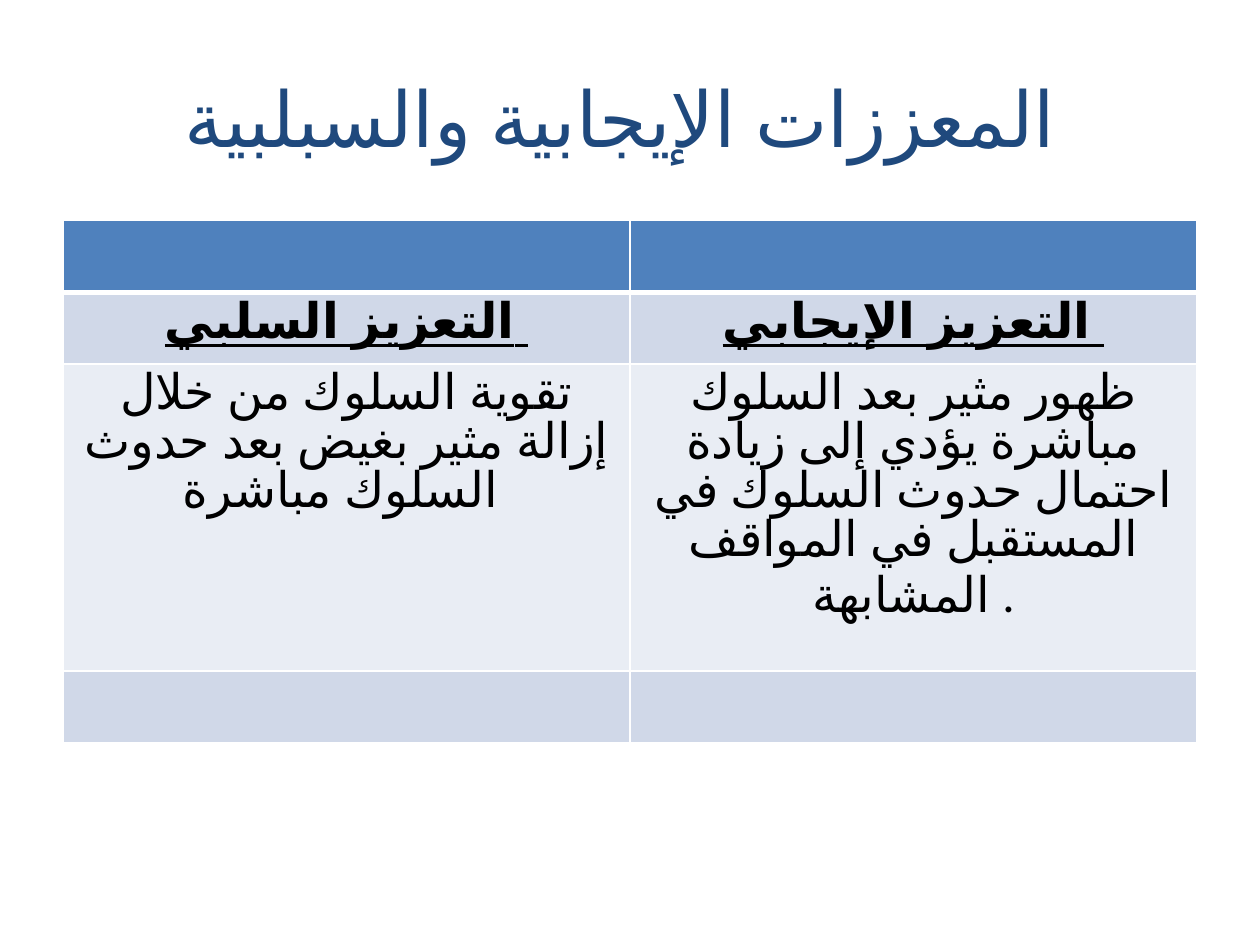
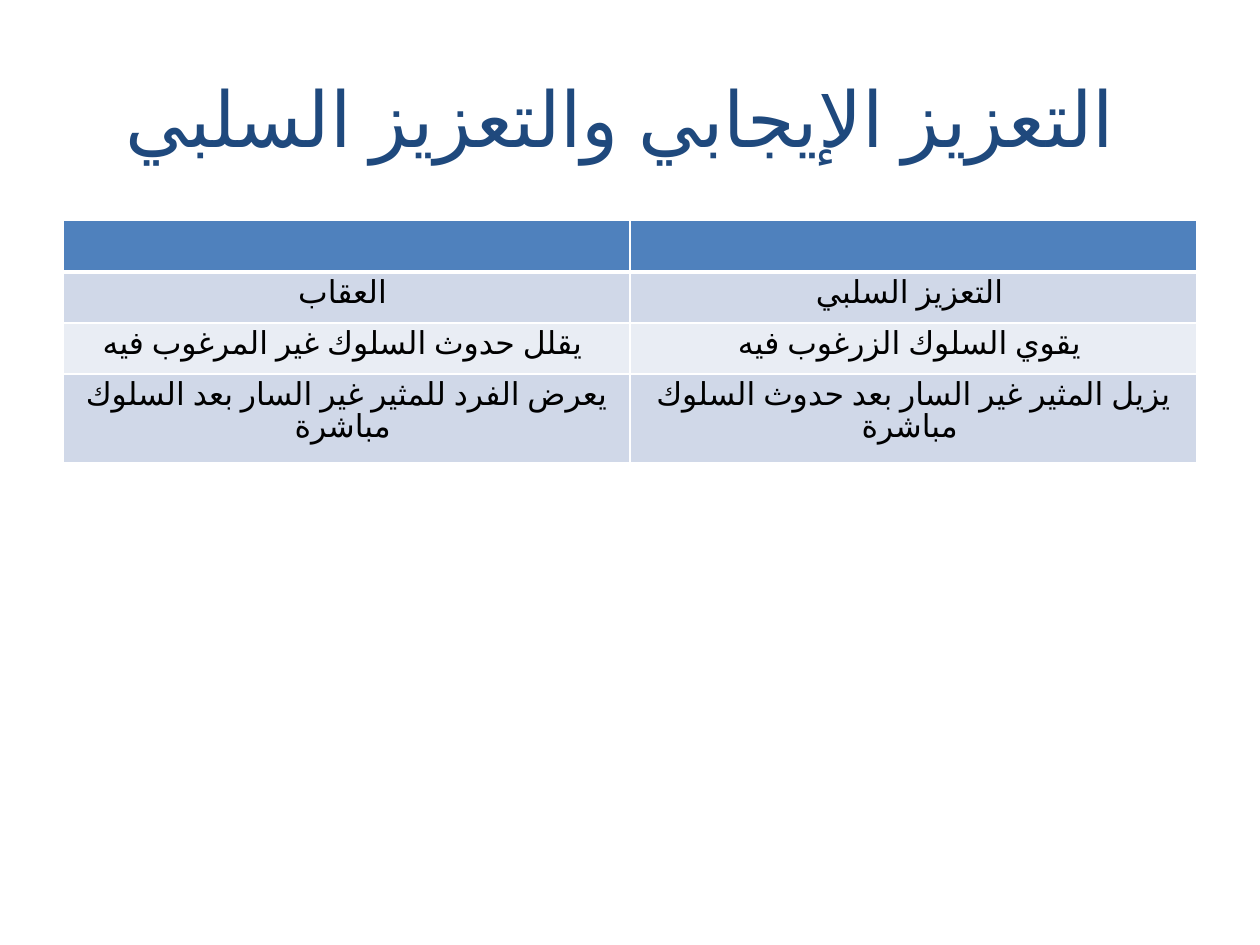
from lxml.etree import SubElement as Sub
from pptx import Presentation
from pptx.dml.color import RGBColor
from pptx.enum.lang import MSO_LANGUAGE_ID as LANG
from pptx.enum.text import MSO_ANCHOR, PP_ALIGN
from pptx.oxml.ns import qn
from pptx.util import Cm, Pt

NAVY, BLUE, BAND, PALE = "1F497D", "4F81BD", "D0D8E8", "E9EDF4"
WHITE, BLACK = "FFFFFF", "000000"
FILLS = [BLUE, BAND, PALE, BAND]
LEFT, WIDTH = Cm(1.27), Cm(22.86)

BASE = {"name": "Calibri", "language_id": LANG.ARABIC, "bold": False}
TITLE = {**BASE, "size": Pt(44)}
LARGE = {**BASE, "size": Pt(28)}
HEAD = {**LARGE, "bold": True, "underline": True}
SMALL = {**BASE, "size": Pt(18)}


def color(hue):
    return RGBColor.from_string(hue)


def write(frame, text, style, hue):
    para = frame.paragraphs[0]
    para.alignment = PP_ALIGN.CENTER
    run = para.add_run()
    run.text = text
    for name, value in style.items():
        setattr(run.font, name, value)
    run.font.color.rgb = color(hue)


def add_title(slide, text):
    frame = slide.shapes.add_textbox(LEFT, Cm(0.76), WIDTH, Cm(3.18)).text_frame
    frame.word_wrap = True
    frame.vertical_anchor = MSO_ANCHOR.MIDDLE
    write(frame, text, TITLE, NAVY)


def add_edges(cell, widths):
    props = cell._tc.get_or_add_tcPr()
    for side, width in widths.items():
        line = Sub(props, qn(f"a:ln{side}"), w=str(Pt(width)))
        Sub(Sub(line, qn("a:solidFill")), qn("a:srgbClr"), val=WHITE)


def add_grid(slide, rows, heights, styles):
    tall = [Cm(size) for size in heights]
    table = slide.shapes.add_table(
        len(rows), 2, LEFT, Cm(4.45), WIDTH, sum(tall)).table
    table.first_row = table.horz_banding = False
    for row, texts in enumerate(rows):
        table.rows[row].height = tall[row]
        for col, text in enumerate(texts):
            cell = table.cell(row, col)
            add_edges(cell, {"L": 1, "R": 1, "T": 3 if row == 1 else 1,
                             "B": 3 if row == 0 else 1})
            cell.fill.solid()
            cell.fill.fore_color.rgb = color(FILLS[row])
            if text:
                write(cell.text_frame, text, styles[row], BLACK)


def add_page(deck, title, rows, heights, styles):
    slide = deck.slides.add_slide(deck.slide_layouts[6])
    add_title(slide, title)
    add_grid(slide, rows, heights, styles)


def main():
    deck = Presentation()
    deck.slide_width, deck.slide_height = Cm(25.4), Cm(19.05)
    blank = ("", "")
    add_page(deck, "المعززات الإيجابية والسبلبية ", [
        blank,
        ("التعزيز السلبي ", "التعزيز الإيجابي "),
        ("تقوية السلوك من خلال إزالة مثير بغيض بعد حدوث السلوك مباشرة ",
         "ظهور مثير بعد السلوك مباشرة يؤدي إلى زيادة احتمال حدوث السلوك "
         "في المستقبل في المواقف المشابهة ."),
        blank,
    ], [1.45, 1.24, 5.42, 1.45], [LARGE, HEAD, LARGE, LARGE])
    add_page(deck, "التعزيز الإيجابي والتعزيز السلبي ", [
        blank,
        ("العقاب ", "التعزيز السلبي "),
        ("يقلل حدوث السلوك غير المرغوب فيه ", "يقوي السلوك الزرغوب فيه "),
        ("يعرض الفرد للمثير غير السار بعد السلوك مباشرة ",
         "يزيل المثير غير السار بعد حدوث السلوك مباشرة "),
    ], [1.03, 1.03, 1.03, 1.51], [SMALL] * 4)
    deck.save("out.pptx")


if __name__ == "__main__":
    main()
